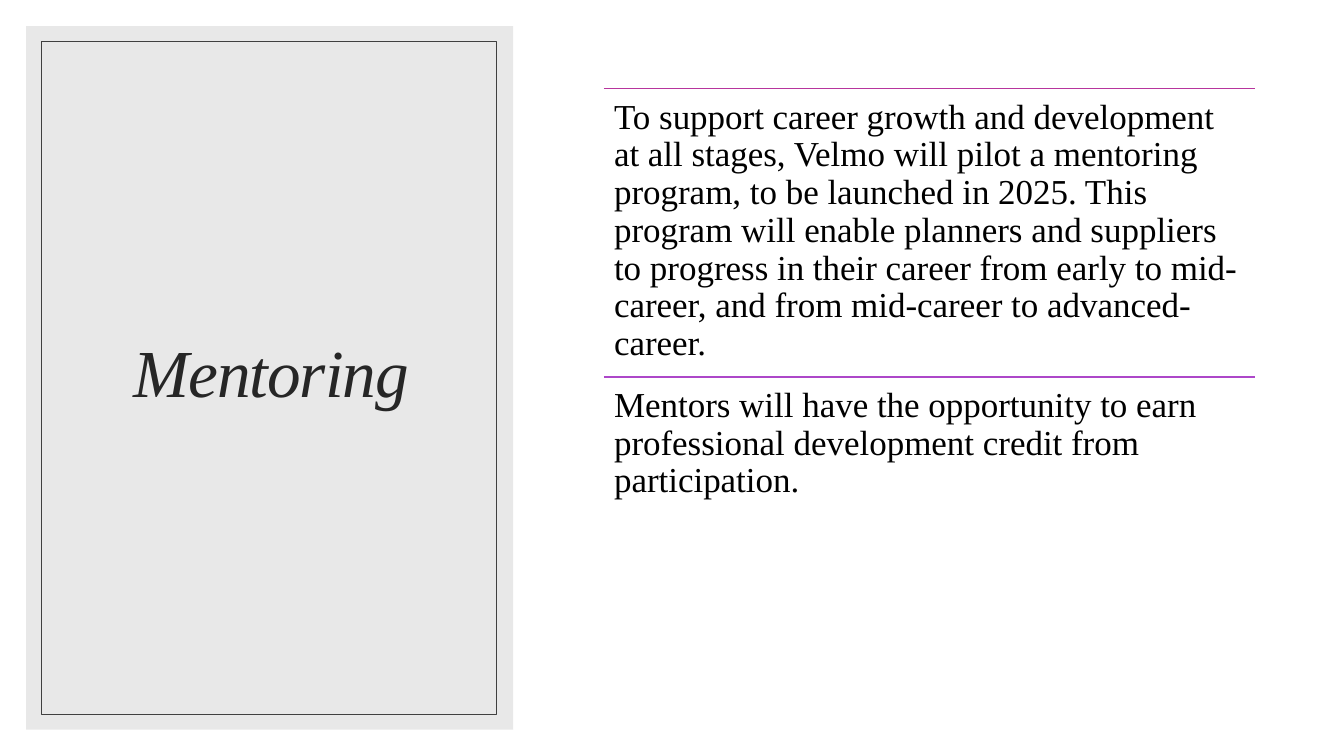
from lxml.etree import SubElement
from pptx import Presentation
from pptx.dml.color import RGBColor
from pptx.enum.shapes import MSO_CONNECTOR, MSO_SHAPE
from pptx.enum.text import MSO_ANCHOR, MSO_AUTO_SIZE, PP_ALIGN
from pptx.oxml import parse_xml
from pptx.oxml.ns import nsdecls, qn
from pptx.util import Inches, Pt

WIDTH, HEIGHT = Inches(13.33), Inches(7.5)
LIST_LEFT, LIST_TOP = Inches(5.99), Inches(0.88)
LIST_WIDTH, ROW_HEIGHT = Inches(6.46), Inches(2.86)
FONT = "Times New Roman"
WHITE = RGBColor(0xFF, 0xFF, 0xFF)
BLACK = RGBColor(0, 0, 0)
PANEL_GREY = RGBColor(0xD9, 0xD9, 0xD9)
FRAME_GREY = RGBColor(0x40, 0x40, 0x40)
TITLE_GREY = RGBColor(0x26, 0x26, 0x26)
MAGENTA = RGBColor(0xB7, 0x35, 0x9D)
PURPLE = RGBColor(0xAD, 0x47, 0xC9)

POINTS = [
    (MAGENTA, "To support career growth and development at all stages, Velmo will "
     "pilot a mentoring program, to be launched in 2025. This program will enable "
     "planners and suppliers to progress in their career from early to mid-career, "
     "and from mid-career to advanced-career."),
    (PURPLE, "Mentors will have the opportunity to earn professional development "
     "credit from participation."),
]


def place(shape, left, top, width, height):
    shape.left, shape.top, shape.width, shape.height = left, top, width, height


def add_panel(page, left, top, width, height, fill=None, line=None, opacity=100):
    """Add a plain rectangle behind the title."""
    panel = page.shapes.add_shape(MSO_SHAPE.RECTANGLE, left, top, width, height)
    panel.shadow.inherit = False
    if fill is None:
        panel.fill.background()
    else:
        panel.fill.solid()
        panel.fill.fore_color.rgb = fill
        if opacity < 100:
            color = panel.element.spPr.find(qn("a:solidFill"))[0]
            SubElement(color, qn("a:alpha"), val=str(opacity * 1000))
    if line is None:
        panel.line.fill.background()
    else:
        panel.line.color.rgb = line
        panel.line.width = Pt(0.5)
    page.shapes.title.element.addprevious(panel.element)


def add_rule(page, top, color):
    rule = page.shapes.add_connector(
        MSO_CONNECTOR.STRAIGHT, LIST_LEFT, top, LIST_LEFT + LIST_WIDTH, top)
    rule.line.color.rgb = color
    rule.line.width = Pt(1)
    SubElement(rule.element.spPr, qn("a:effectLst"))


def write(box, text, size, color, anchor):
    """Fill a placeholder with one formatted paragraph and return it."""
    frame = box.text_frame
    frame.text = text
    frame.word_wrap = True
    frame.auto_size = MSO_AUTO_SIZE.NONE
    frame.vertical_anchor = anchor
    para = frame.paragraphs[0]
    para.line_spacing = 0.9
    para.space_before = Pt(0)
    para.font.name = FONT
    para.font.size = Pt(size)
    para.font.color.rgb = color
    return para


def fill_title(title):
    place(title, Inches(0.63), Inches(0.61), Inches(4.12), Inches(6.24))
    para = write(title, "Mentoring", 48, TITLE_GREY, MSO_ANCHOR.MIDDLE)
    para.alignment = PP_ALIGN.CENTER
    para.font.italic = True
    next(title.element.iter(qn("a:defRPr"))).set("spc", "-70")


def fill_point(box, top, text):
    place(box, LIST_LEFT, top, LIST_WIDTH, ROW_HEIGHT)
    para = write(box, text, 25, BLACK, MSO_ANCHOR.TOP)
    para.space_after = Pt(8.75)
    frame = box.text_frame
    frame.margin_left = frame.margin_right = Inches(0.1)
    frame.margin_top = frame.margin_bottom = Inches(0.1)
    properties = next(box.element.iter(qn("a:pPr")))
    properties.set("marL", "0")
    properties.set("indent", "0")
    properties.find(qn("a:defRPr")).addprevious(
        parse_xml(f"<a:buNone {nsdecls('a')}/>"))


def main():
    deck = Presentation()
    deck.slide_width, deck.slide_height = WIDTH, HEIGHT
    page = deck.slides.add_slide(deck.slide_layouts.get_by_name("Two Content"))
    title, *boxes = page.placeholders

    add_panel(page, 0, 0, WIDTH, HEIGHT, fill=WHITE)
    add_panel(page, Inches(0.26), Inches(0.26), Inches(4.83), Inches(6.98),
              fill=PANEL_GREY, opacity=60)
    add_panel(page, Inches(0.41), Inches(0.41), Inches(4.51), Inches(6.68),
              line=FRAME_GREY)
    fill_title(title)
    for row, (box, (color, text)) in enumerate(zip(boxes, POINTS)):
        top = LIST_TOP + row * ROW_HEIGHT
        add_rule(page, top, color)
        fill_point(box, top, text)
    deck.save("out.pptx")


if __name__ == "__main__":
    main()
